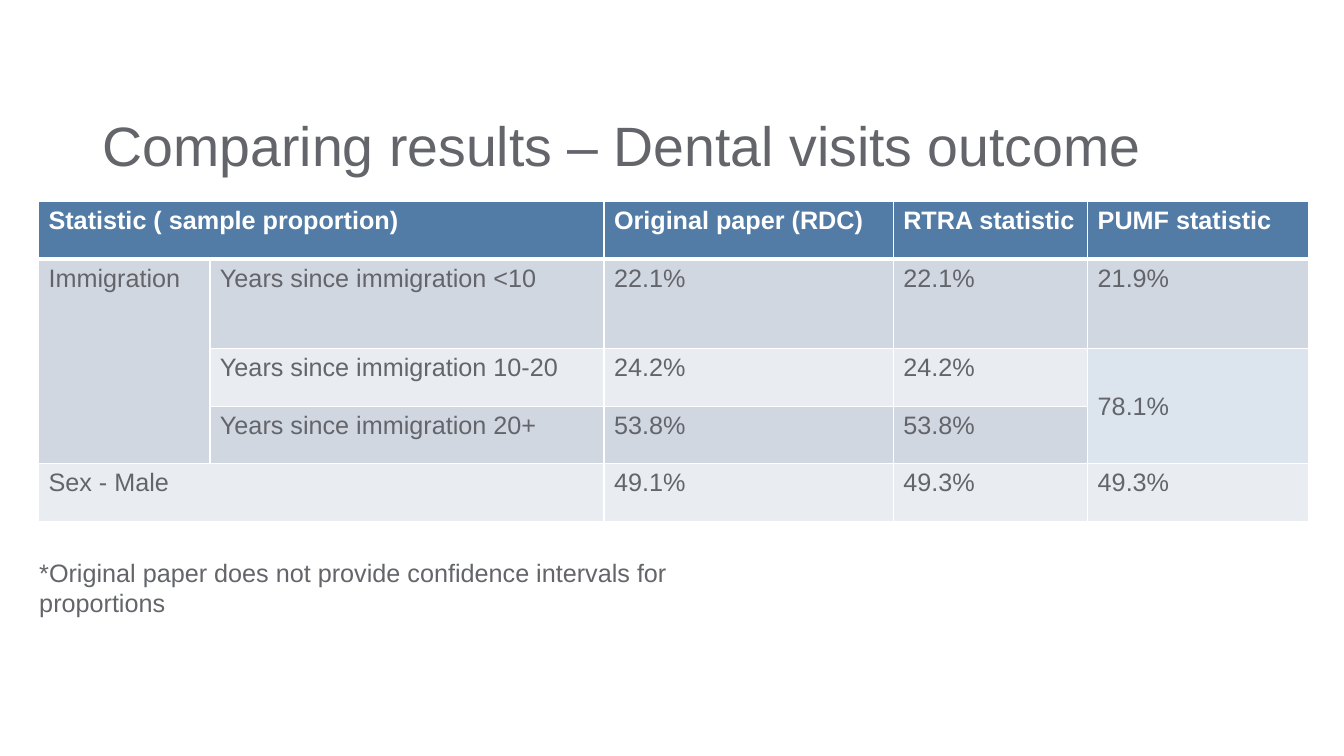
from lxml.etree import SubElement
from pptx import Presentation
from pptx.dml.color import RGBColor
from pptx.enum.text import MSO_ANCHOR
from pptx.oxml.ns import qn
from pptx.util import Cm, Pt

COLORS = {
    "text": "63656A",
    "white": "FFFFFF",
    "header": "527CA6",
    "dark band": "D1D7E1",
    "light band": "E9ECF1",
    "combined": "DCE5EE",
}
COLUMN_WIDTHS = [4.32, 9.93, 7.29, 4.9, 5.56]
ROW_HEIGHTS = [1.45, 2.26, 1.45, 1.45, 1.45]
RESULTS = [
    ["Statistic ( sample proportion)", "", "Original paper (RDC)", "RTRA statistic", "PUMF statistic"],
    ["Immigration", "Years since immigration <10", "22.1%", "22.1%", "21.9%"],
    ["", "Years since immigration 10-20", "24.2%", "24.2%", "78.1%"],
    ["", "Years since immigration 20+", "53.8%", "53.8%", ""],
    ["Sex - Male", "", "49.1%", "49.3%", "49.3%"],
]
MERGES = [((0, 0), (0, 1)), ((1, 0), (3, 0)), ((2, 4), (3, 4)), ((4, 0), (4, 1))]
COMBINED_CELLS = [(2, 4), (3, 4)]


class ResultsPage:
    """Hold the style and current slide, and draw its elements."""

    def __init__(self, page, font="Arial", size=18):
        self.page = page
        self.font = font
        self.size = size

    def style(self, paragraph, color="text", size=None, bold=False):
        paragraph.font.name = self.font
        paragraph.font.size = Pt(size or self.size)
        paragraph.font.bold = bold
        paragraph.font.color.rgb = RGBColor.from_string(COLORS[color])

    def text(self, words, left, top, width, height, size=None, anchor=MSO_ANCHOR.TOP, spacing=1.0):
        box = self.page.shapes.add_textbox(Cm(left), Cm(top), Cm(width), Cm(height))
        frame = box.text_frame
        frame.word_wrap = True
        frame.vertical_anchor = anchor
        paragraph = frame.paragraphs[0]
        paragraph.text = words
        paragraph.line_spacing = spacing
        self.style(paragraph, size=size)

    def border(self, cell, side, width):
        properties = cell._tc.get_or_add_tcPr()
        line = SubElement(properties, qn(f"a:ln{side}"), w=str(Pt(width)))
        fill = SubElement(line, qn("a:solidFill"))
        SubElement(fill, qn("a:srgbClr"), val=COLORS["white"])

    def cell(self, cell, words, fill, header, borders):
        for side, width in borders.items():
            self.border(cell, side, width)
        cell.fill.solid()
        cell.fill.fore_color.rgb = RGBColor.from_string(COLORS[fill])
        paragraph = cell.text_frame.paragraphs[0]
        paragraph.text = words
        self.style(paragraph, "white" if header else "text", bold=header)

    def table(self, rows, left, top, widths, heights):
        frame = self.page.shapes.add_table(
            len(rows), len(widths), Cm(left), Cm(top), Cm(sum(widths)), Cm(sum(heights)))
        table = frame.table
        for column, width in zip(table.columns, widths):
            column.width = Cm(width)
        for row, height in zip(table.rows, heights):
            row.height = Cm(height)
        for start, end in MERGES:
            table.cell(*start).merge(table.cell(*end))
        for r, row in enumerate(rows):
            band = "header" if r == 0 else ("dark band" if r % 2 else "light band")
            borders = {"L": 1, "R": 1, "T": 3 if r == 1 else 1, "B": 3 if r == 0 else 1}
            for c, words in enumerate(row):
                combined = (r, c) in COMBINED_CELLS
                fill = "combined" if combined else "dark band" if r and (r, c) in [(2, 0)] else band
                self.cell(table.cell(r, c), words, fill, r == 0, borders)
                if combined:
                    table.cell(r, c).vertical_anchor = MSO_ANCHOR.MIDDLE


def main():
    deck = Presentation()
    deck.slide_width, deck.slide_height = Cm(33.87), Cm(19.05)
    page = ResultsPage(deck.slides.add_slide(deck.slide_layouts[6]))
    page.text("Comparing results – Dental visits outcome", 2.34, 2.77, 29.21, 1.93,
              size=39.6, anchor=MSO_ANCHOR.MIDDLE, spacing=0.9)
    page.table(RESULTS, 0.97, 5.08, COLUMN_WIDTHS, ROW_HEIGHTS)
    page.text("*Original paper does not provide confidence intervals for proportions",
              0.74, 13.92, 19.63, 1.02)
    deck.save("out.pptx")


if __name__ == "__main__":
    main()
